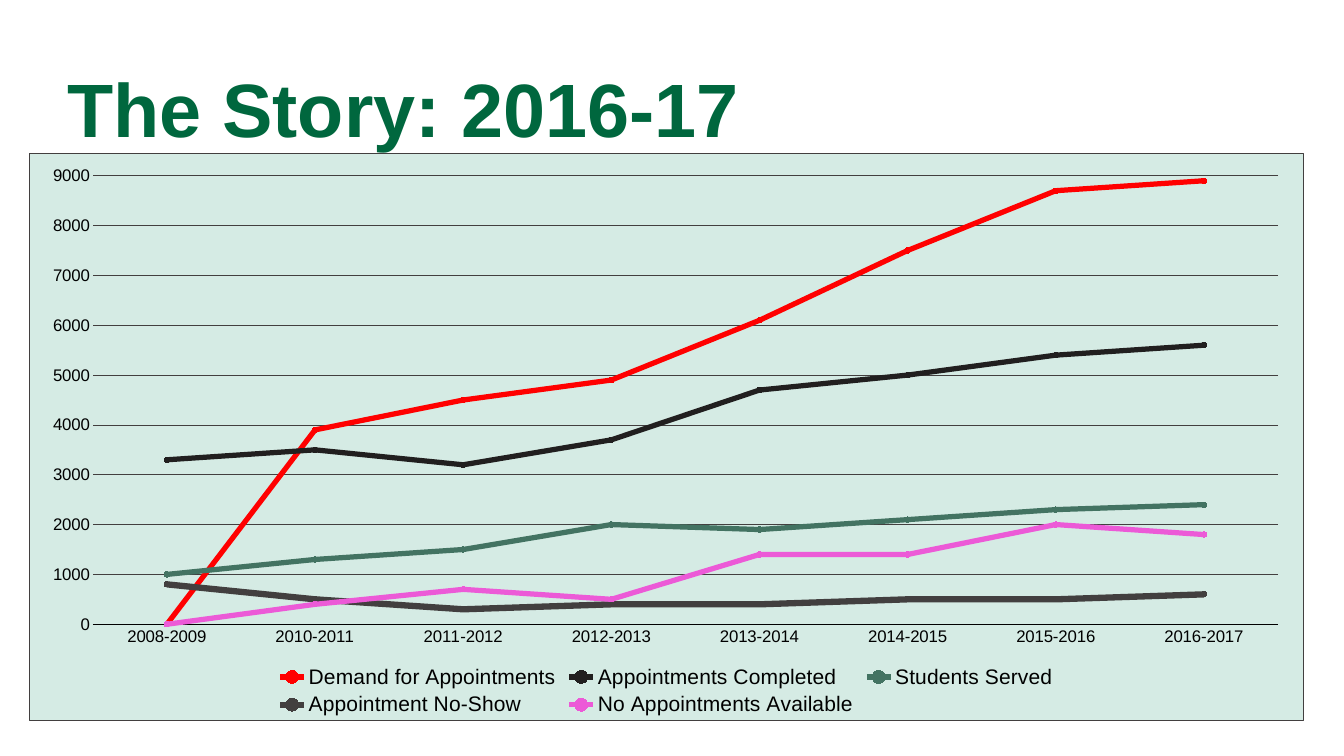
"""Build the slide with the 2016-17 appointments line chart."""
from dataclasses import dataclass
from typing import Optional

from lxml import etree
from pptx import Presentation
from pptx.chart.data import CategoryChartData
from pptx.dml.color import RGBColor
from pptx.enum.chart import XL_CHART_TYPE, XL_LEGEND_POSITION, XL_MARKER_STYLE, XL_TICK_MARK
from pptx.enum.text import MSO_ANCHOR, PP_ALIGN
from pptx.oxml import parse_xml
from pptx.oxml.ns import nsdecls, qn
from pptx.util import Inches, Pt

LINE_MARKERS = XL_CHART_TYPE.LINE_MARKERS
BOTTOM = XL_LEGEND_POSITION.BOTTOM
CIRCLE = XL_MARKER_STYLE.CIRCLE
NO_TICK = XL_TICK_MARK.NONE
MIDDLE = MSO_ANCHOR.MIDDLE
LEFT = PP_ALIGN.LEFT

FONT = "Arial"
COLORS = {
    "title": "00673E", "text": "000000", "panel": "D5EBE4", "grid": "423F3F",
    "demand": "FF0000", "completed": "211F1F", "served": "437362",
    "no_show": "423F3F", "unavailable": "EC5AD7",
}
YEARS = ["2008-2009"] + [f"{y}-{y + 1}" for y in range(2010, 2017)]
PLOT_BOX = {"x": 0.05, "y": 0.04, "w": 0.93, "h": 0.79}


@dataclass
class Trend:
    """One line of the chart."""
    name: str
    values: list[Optional[int]]
    color: str
    marker: str
    width: float = 5


TRENDS = [
    Trend("Demand for Appointments", [None, 3900, 4500, 4900, 6100, 7500, 8700, 8900],
          "demand", "599A83"),
    Trend("Appointments Completed", [3300, 3500, 3200, 3700, 4700, 5000, 5400, 5600],
          "completed", "A6C8BC"),
    Trend("Students Served", [1000, 1300, 1500, 2000, 1900, 2100, 2300, 2400],
          "served", "408A70"),
    Trend("Appointment No-Show", [800, 500, 300, 400, 400, 500, 500, 600],
          "no_show", "423F3F", 6),
    Trend("No Appointments Available", [None, 400, 700, 500, 1400, 1400, 2000, 1800],
          "unavailable", "003E25"),
]


def rgb(name: str) -> RGBColor:
    """Look up a named colour."""
    return RGBColor.from_string(COLORS[name])


def set_font(font, size: float, color: str) -> None:
    """Apply the slide font with a size and a colour."""
    font.name, font.size = FONT, Pt(size)
    font.color.rgb = rgb(color)


def set_line(line, color: str, width: float) -> None:
    """Give a line its colour and its width in points."""
    line.color.rgb, line.width = rgb(color), Pt(width)


def style_axis(axis) -> None:
    """Remove the tick marks and format the labels."""
    axis.major_tick_mark = axis.minor_tick_mark = NO_TICK
    set_font(axis.tick_labels.font, 16, "text")


def style_trend(series, trend: Trend) -> None:
    """Format one chart line and its markers."""
    series.smooth = False
    set_line(series.format.line, trend.color, trend.width)
    marker = series.marker
    marker.style, marker.size = CIRCLE, 5
    marker.format.fill.solid()
    marker.format.fill.fore_color.rgb = RGBColor.from_string(trend.marker)
    set_line(marker.format.line, trend.color, 0.75)


def style_panel(chart) -> None:
    """Fill and outline the chart area, place the plot, draw blanks as zero."""
    root = chart.element.find(qn("c:chart"))
    root.addnext(parse_xml(
        f'<c:spPr {nsdecls("c", "a")}><a:solidFill><a:srgbClr val="{COLORS["panel"]}"/></a:solidFill>'
        f'<a:ln w="{Pt(0.75)}"><a:solidFill><a:srgbClr val="{COLORS["grid"]}"/></a:solidFill></a:ln></c:spPr>'))
    root.find(qn("c:dispBlanksAs")).set("val", "zero")
    plot_area = root.find(qn("c:plotArea"))
    for old in plot_area.findall(qn("c:layout")):
        plot_area.remove(old)
    layout = parse_xml(f'<c:layout {nsdecls("c")}><c:manualLayout/></c:layout>')
    settings = {"layoutTarget": "inner", "xMode": "edge", "yMode": "edge", **PLOT_BOX}
    for tag, value in settings.items():
        etree.SubElement(layout[0], qn(f"c:{tag}")).set("val", str(value))
    plot_area.insert(0, layout)


def add_trend_chart(s) -> None:
    """Add the line chart of all trends."""
    data = CategoryChartData()
    data.categories = YEARS
    for trend in TRENDS:
        data.add_series(trend.name, trend.values)
    chart = s.shapes.add_chart(LINE_MARKERS, Inches(0.38), Inches(2.02),
                               Inches(16.87), Inches(7.52), data).chart
    chart.has_title = False
    set_font(chart.font, 10, "grid")
    chart.has_legend = True
    chart.legend.position = BOTTOM
    chart.legend.include_in_layout = False
    set_font(chart.legend.font, 20, "text")
    years, counts = chart.category_axis, chart.value_axis
    style_axis(years)
    style_axis(counts)
    set_line(years.format.line, "text", 0.75)
    counts.format.line.fill.background()
    counts.minimum_scale, counts.maximum_scale, counts.major_unit = 0, 9000, 1000
    set_line(counts.major_gridlines.format.line, "grid", 0.75)
    chart.plots[0].vary_by_categories = False
    for series, trend in zip(chart.plots[0].series, TRENDS):
        style_trend(series, trend)
    style_panel(chart)


def add_title(s, text: str) -> None:
    """Place and format the title in front of the chart."""
    title = s.shapes.title
    title.left, title.top = Inches(0.89), Inches(0.73)
    title.width, title.height = Inches(16), Inches(1.6)
    tf = title.text_frame
    tf.text, tf.word_wrap, tf.vertical_anchor = text, True, MIDDLE
    tf.margin_left = tf.margin_top = tf.margin_right = tf.margin_bottom = 0
    p = tf.paragraphs[0]
    p.alignment, p.line_spacing, p.font.bold = LEFT, 0.8, True
    set_font(p.font, 72, "title")
    s.shapes.element.append(title.element)


def main() -> None:
    """Build and save the presentation."""
    prs = Presentation()
    prs.slide_width, prs.slide_height = Inches(17.78), Inches(10)
    s = prs.slides.add_slide(prs.slide_layouts[5])
    add_trend_chart(s)
    add_title(s, "The Story: 2016-17")
    prs.save("out.pptx")


if __name__ == "__main__":
    main()
